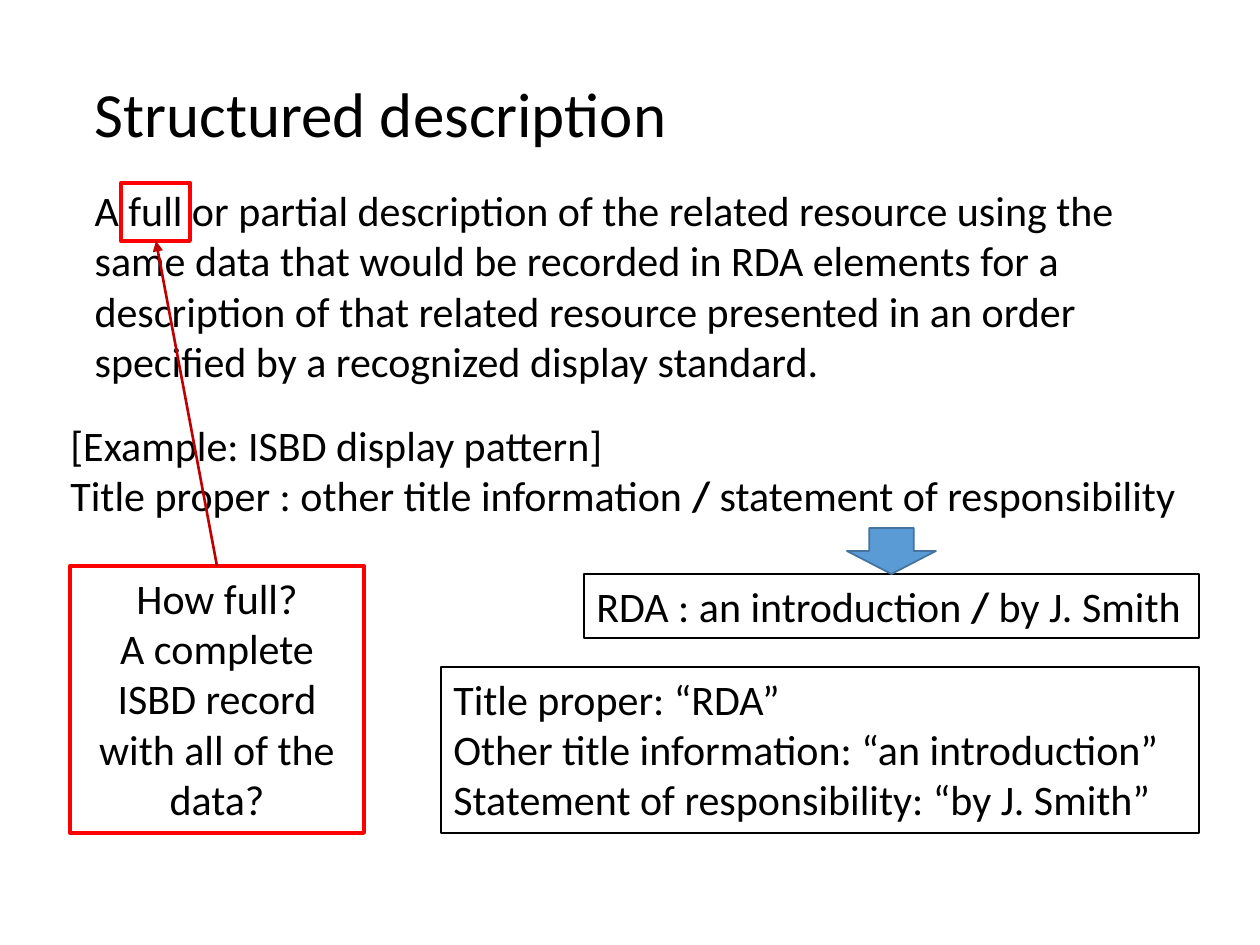
from lxml.etree import SubElement
from pptx import Presentation
from pptx.dml.color import RGBColor
from pptx.enum.shapes import MSO_CONNECTOR as Connector, MSO_SHAPE as Shape
from pptx.enum.text import MSO_ANCHOR as Anchor, MSO_AUTO_SIZE as AutoSize, PP_ALIGN as Align
from pptx.oxml.ns import qn
from pptx.util import Pt

PX = 914400 / 126


def color(value):
    return RGBColor.from_string(value)


def write(holder, paragraphs, size=24, align=Align.LEFT, wrap=False):
    frame = holder.text_frame
    frame.word_wrap = wrap
    frame.auto_size = AutoSize.NONE
    frame.vertical_anchor = Anchor.TOP
    for i, runs in enumerate(paragraphs):
        paragraph = frame.paragraphs[0] if i == 0 else frame.add_paragraph()
        props = paragraph._p.get_or_add_pPr()
        props.set("marL", "0")
        props.set("indent", "0")
        SubElement(props, qn("a:buNone"))
        paragraph.alignment = align
        paragraph.space_before = Pt(0)
        paragraph.font.size = Pt(size)
        for j, text in enumerate(runs):
            run = paragraph.add_run()
            run.text = text
            run.font.name = "Calibri"
            run.font.size = Pt(size)
            run.font.bold = j % 2 == 1
            run.font.color.rgb = color("000000")


prs = Presentation()
prs.slide_width = round(1260 * PX)
prs.slide_height = round(945 * PX)
slide = prs.slides.add_slide(prs.slide_layouts[1])
shapes = slide.shapes

title = shapes.title
definition = slide.placeholders[1]
pattern = shapes.add_textbox(0, 0, 0, 0)
texts = [
    (title, (82, 68, 602, 89), [["Structured description"]], 36, False),
    (definition, (82, 178, 1092, 217), [[
        "A full or partial description of the related resource using the same data "
        "that would be recorded in RDA elements for a description of that related "
        "resource presented in an order specified by a recognized display standard."
    ]], 24, True),
    (pattern, (58, 413, 1142, 115), [
        ["[Example: ISBD display pattern]"],
        ["Title proper : other title information", " /", " statement of responsibility"],
    ], 24, False),
]
for holder, box, paragraphs, size, wrap in texts:
    holder.left, holder.top, holder.width, holder.height = [round(v * PX) for v in box]
    write(holder, paragraphs, size=size, wrap=wrap)

frames = [
    ((584, 574, 615, 64), "000000", 1.5, Align.LEFT, False,
     [["RDA : an introduction", " / ", "by J. Smith"]]),
    ((441, 667, 758, 166), "000000", 1.5, Align.LEFT, False,
     [["Title proper: “RDA”"],
      ["Other title information: “an introduction”"],
      ["Statement of responsibility: “by J. Smith”"]]),
    ((121, 183, 69, 58), "FF0000", 2.25, Align.CENTER, True, []),
    ((70, 566, 294, 267), "FF0000", 2.25, Align.CENTER, True,
     [["How full?"], ["A complete ISBD record"], ["with all of the data?"]]),
]
for box, outline, weight, align, wrap, paragraphs in frames:
    frame = shapes.add_shape(Shape.RECTANGLE, *[round(v * PX) for v in box])
    frame.shadow.inherit = False
    frame.fill.background()
    frame.line.color.rgb = color(outline)
    frame.line.width = Pt(weight)
    write(frame, paragraphs, align=align, wrap=wrap)

pointer = shapes.add_connector(
    Connector.STRAIGHT, *[round(v * PX) for v in (217, 566, 156, 241)])
pointer.line.color.rgb = color("C00000")
pointer.line.width = Pt(1.5)
SubElement(pointer.line._get_or_add_ln(), qn("a:tailEnd"), type="triangle")
SubElement(pointer._element.spPr, qn("a:effectLst"))

example_arrow = shapes.add_shape(
    Shape.DOWN_ARROW, *[round(v * PX) for v in (847, 528, 89, 46)])
example_arrow.shadow.inherit = False
example_arrow.fill.solid()
example_arrow.fill.fore_color.rgb = color("5B9BD5")
example_arrow.line.color.rgb = color("43739E")
example_arrow.line.width = Pt(1)

prs.save("out.pptx")
